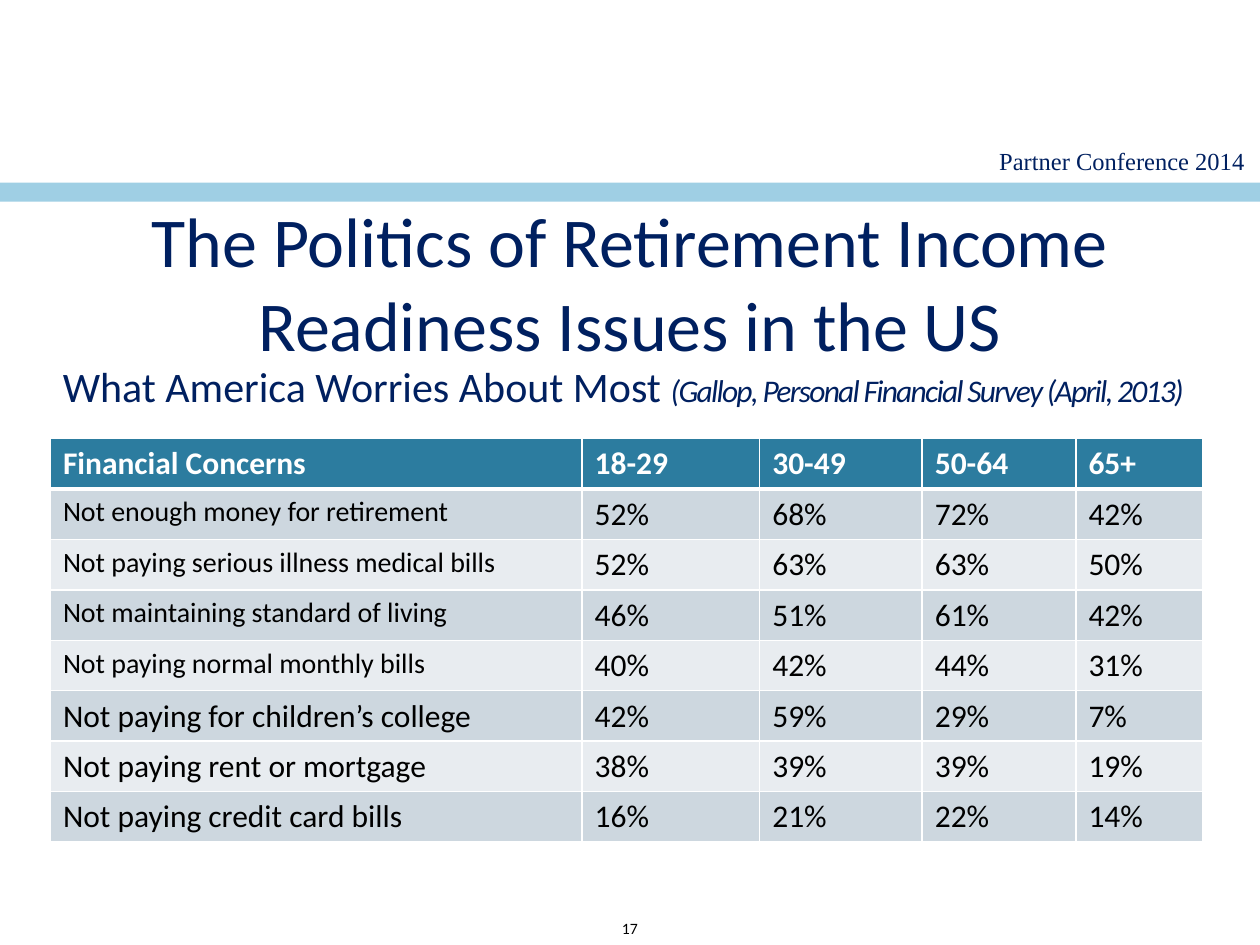
from typing import NamedTuple

from lxml.etree import SubElement
from pptx import Presentation
from pptx.dml.color import RGBColor
from pptx.enum.shapes import MSO_SHAPE
from pptx.enum.text import MSO_ANCHOR as Anchor, PP_ALIGN as Align
from pptx.oxml.ns import qn
from pptx.util import Inches, Pt

COLORS = {
    "navy": "002060", "band": "9FCFE4", "header": "2C7C9F",
    "odd": "CDD7DF", "even": "E8ECF0", "white": "FFFFFF", "black": "000000",
}


class Concern(NamedTuple):
    label: str
    shares: tuple[int, ...]
    label_size: int = 18


AGES = ("18-29", "30-49", "50-64", "65+")
CONCERNS = [
    Concern("Not enough money for retirement", (52, 68, 72, 42), 16),
    Concern("Not paying serious illness medical bills", (52, 63, 63, 50), 16),
    Concern("Not maintaining standard of living", (46, 51, 61, 42), 16),
    Concern("Not paying normal monthly bills", (40, 42, 44, 31), 16),
    Concern("Not paying for children’s college", (42, 59, 29, 7)),
    Concern("Not paying rent or mortgage", (38, 39, 39, 19)),
    Concern("Not paying credit card bills", (16, 21, 22, 14)),
]
COL_WIDTHS = (4.22, 1.41, 1.29, 1.22, 1.01)
ROW_HEIGHT = 0.4


def rgb(name: str) -> RGBColor:
    return RGBColor.from_string(COLORS[name])


def add_text(p, text: str, *, size: float, color: str = "navy", font: str = "Calibri",
             bold: bool = False, italic: bool = False, spacing: float = 0) -> None:
    """Append a formatted run; spacing is the letter spacing in points."""
    r = p.add_run()
    r.text = text
    r.font.size, r.font.name = Pt(size), font
    r.font.bold, r.font.italic = bold, italic
    r.font.color.rgb = rgb(color)
    if spacing:
        r.font._element.set("spc", str(int(spacing * 100)))


def add_box(slide, left: float, top: float, width: float, height: float,
            align=Align.LEFT, anchor=Anchor.TOP, bottom: float = 0.05):
    """Add a wrapping text box and return its first paragraph."""
    sp = slide.shapes.add_textbox(Inches(left), Inches(top), Inches(width), Inches(height))
    tf = sp.text_frame
    tf.word_wrap, tf.vertical_anchor = True, anchor
    tf.margin_bottom = Inches(bottom)
    p = tf.paragraphs[0]
    p.alignment = align
    return p


def set_borders(cell, widths: dict[str, float]) -> None:
    """Draw white cell borders; must run before the cell fill is set."""
    tc_pr = cell._tc.get_or_add_tcPr()
    for side, width in widths.items():
        ln = SubElement(tc_pr, qn(f"a:{side}"), w=str(Pt(width)))
        fill = SubElement(ln, qn("a:solidFill"))
        SubElement(fill, qn("a:srgbClr"), val=COLORS["white"])


def fill_row(table, row: int, texts: list[str], sizes: list[int],
             fill: str, color: str, bold: bool = False) -> None:
    for col, (text, size) in enumerate(zip(texts, sizes)):
        cell = table.cell(row, col)
        set_borders(cell, {"lnL": 1, "lnR": 1, "lnT": 3 if row == 1 else 1,
                           "lnB": 3 if row == 0 else 1})
        cell.fill.solid()
        cell.fill.fore_color.rgb = rgb(fill)
        add_text(cell.text_frame.paragraphs[0], text, size=size, color=color, bold=bold)


def add_concerns_table(slide, left: float, top: float) -> None:
    rows = len(CONCERNS) + 1
    table = slide.shapes.add_table(
        rows, len(COL_WIDTHS), Inches(left), Inches(top),
        Inches(sum(COL_WIDTHS)), Inches(rows * ROW_HEIGHT)).table
    for column, width in zip(table.columns, COL_WIDTHS):
        column.width = Inches(width)
    fill_row(table, 0, ["Financial Concerns", *AGES], [18] * len(COL_WIDTHS),
             "header", "white", bold=True)
    for i, concern in enumerate(CONCERNS, start=1):
        fill_row(table, i, [concern.label, *(f"{share}%" for share in concern.shares)],
                 [concern.label_size] + [18] * len(AGES),
                 "odd" if i % 2 else "even", "black")


def main() -> None:
    prs = Presentation()
    prs.slide_width, prs.slide_height = Inches(10), Inches(7.5)
    s = prs.slides.add_slide(prs.slide_layouts[6])

    # Conference name and band
    p = add_box(s, 7.56, 1.11, 2.69, 0.34, Align.CENTER)
    add_text(p, "Partner Conference 2014", size=14, font="Times New Roman")
    band = s.shapes.add_shape(MSO_SHAPE.RECTANGLE, 0, Inches(1.45), Inches(10), Inches(0.15))
    band.shadow.inherit = False
    band.fill.solid()
    band.fill.fore_color.rgb = rgb("band")
    band.line.fill.background()

    # Page number
    p = add_box(s, 0, 7.24, 10, 0.25, Align.CENTER)
    add_text(p, "17", size=9, color="black")

    # Title and subtitle
    p = add_box(s, 0.6, 1.63, 8.8, 1.27, Align.CENTER, Anchor.BOTTOM, bottom=0)
    add_text(p, "The Politics of Retirement Income Readiness Issues in the US", size=40)
    p = add_box(s, 0.4, 2.81, 9.6, 0.55)
    add_text(p, "What America Worries About Most ", size=24)
    add_text(p, "(Gallop, Personal Financial Survey (April, 2013)",
             size=18, italic=True, spacing=-1)

    # Concerns by age group
    add_concerns_table(s, 0.4, 3.48)

    prs.save("out.pptx")


if __name__ == "__main__":
    main()
